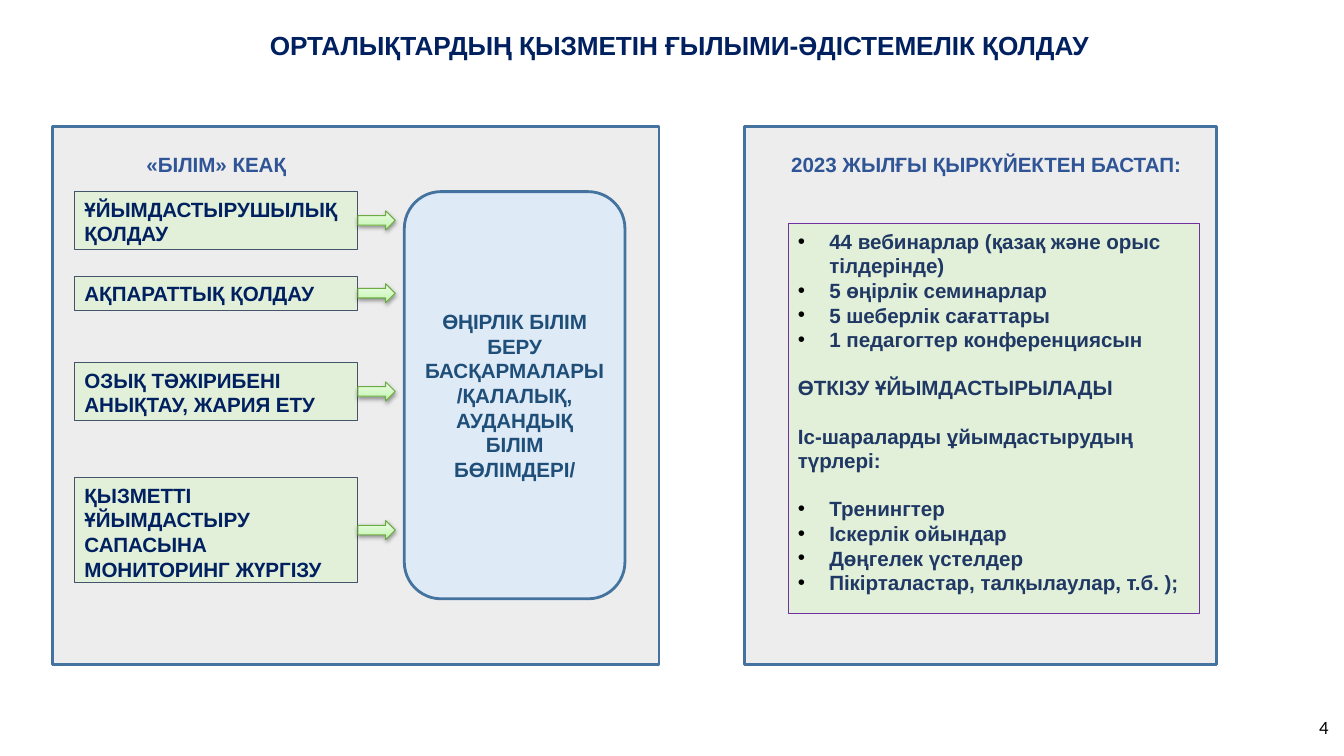
from lxml.etree import SubElement
from pptx import Presentation
from pptx.dml.color import RGBColor
from pptx.enum.shapes import MSO_SHAPE
from pptx.enum.text import MSO_ANCHOR, PP_ALIGN
from pptx.oxml import parse_xml
from pptx.oxml.ns import nsdecls, qn
from pptx.util import Cm, Pt

BLACK = RGBColor(0x00, 0x00, 0x00)
NAVY = RGBColor(0x00, 0x20, 0x60)
HEADING_BLUE = RGBColor(0x2F, 0x55, 0x97)
LIST_BLUE = RGBColor(0x20, 0x38, 0x64)
DEPARTMENT_BLUE = RGBColor(0x1F, 0x4E, 0x79)
PANEL_GRAY = RGBColor(0xED, 0xED, 0xED)
PANEL_LINE = RGBColor(0x43, 0x73, 0x9E)
PALE_BLUE = RGBColor(0xDE, 0xEB, 0xF7)
PALE_GREEN = RGBColor(0xE2, 0xF0, 0xD9)
SLATE = RGBColor(0x44, 0x54, 0x6A)
PURPLE = RGBColor(0x70, 0x30, 0xA0)
ARROW_LINE = RGBColor(0x6D, 0xAC, 0x43)
ARROW_STOPS = [
    (0, RGBColor(0xBE, 0xF5, 0xA7)),
    (35, RGBColor(0xD1, 0xF7, 0xC2)),
    (100, RGBColor(0xED, 0xFD, 0xE7)),
]

BODY_SIZE = 14.67
LINE_HEIGHT = 16.85

SUPPORT_ROWS = [
    (1.65, 1.45, "ҰЙЫМДАСТЫРУШЫЛЫҚ ҚОЛДАУ"),
    (3.78, 0.86, "АҚПАРАТТЫҚ ҚОЛДАУ"),
    (5.96, 1.45, "ОЗЫҚ ТӘЖІРИБЕНІ АНЫҚТАУ, ЖАРИЯ ЕТУ"),
    (8.86, 2.64, "ҚЫЗМЕТТІ ҰЙЫМДАСТЫРУ САПАСЫНА МОНИТОРИНГ ЖҮРГІЗУ"),
]
EVENTS = [
    "44 вебинарлар (қазақ және орыс тілдерінде)",
    "5 өңірлік семинарлар",
    "5 шеберлік сағаттары",
    "1 педагогтер конференциясын",
]
EVENT_TYPES = [
    "Тренингтер",
    "Іскерлік ойындар",
    "Дөңгелек үстелдер",
    "Пікірталастар, талқылаулар, т.б. );",
]


def add_bullet(paragraph):
    properties = paragraph._p.get_or_add_pPr()
    properties.set("marL", str(Cm(0.79)))
    properties.set("indent", str(-Cm(0.79)))
    color = SubElement(properties, qn("a:buClr"))
    SubElement(color, qn("a:srgbClr"), val=str(BLACK))
    SubElement(properties, qn("a:buFont"), typeface="Arial")
    SubElement(properties, qn("a:buChar"), char="•")


def write_text(frame, text, *, color, size=BODY_SIZE, name="Arial", bold=True,
               align=PP_ALIGN.LEFT, anchor=MSO_ANCHOR.TOP, bullet=False,
               space_before=0, append=False):
    frame.word_wrap = True
    frame.vertical_anchor = anchor
    paragraph = frame.add_paragraph() if append else frame.paragraphs[0]
    paragraph.alignment = align
    if space_before:
        paragraph.space_before = Pt(space_before)
    if bullet:
        add_bullet(paragraph)
    run = paragraph.add_run()
    run.text = text
    run.font.name = name
    run.font.size = Pt(size)
    run.font.bold = bold
    run.font.color.rgb = color


def add_label(slide, box, text, **text_format):
    shape = slide.shapes.add_textbox(*(Cm(value) for value in box))
    write_text(shape.text_frame, text, **text_format)


def add_box(slide, box, fill, line, line_width=0.75, kind=MSO_SHAPE.RECTANGLE):
    shape = slide.shapes.add_shape(kind, *(Cm(value) for value in box))
    shape.shadow.inherit = False
    shape.fill.solid()
    shape.fill.fore_color.rgb = fill
    shape.line.color.rgb = line
    shape.line.width = Pt(line_width)
    return shape


def add_arrow(slide, left, middle):
    width, height = 0.94, 0.48
    arrow = add_box(slide, (left, middle - height / 2, width, height),
                    PALE_GREEN, ARROW_LINE, kind=MSO_SHAPE.RIGHT_ARROW)
    properties = arrow._element.spPr
    stops = "".join(
        f'<a:gs pos="{position * 1000}"><a:srgbClr val="{color}"/></a:gs>'
        for position, color in ARROW_STOPS
    )
    gradient = parse_xml(
        f'<a:gradFill {nsdecls("a")} rotWithShape="1"><a:gsLst>{stops}</a:gsLst>'
        '<a:lin ang="16200000" scaled="1"/></a:gradFill>'
    )
    properties.replace(properties.find(qn("a:solidFill")), gradient)
    shadow = parse_xml(
        f'<a:outerShdw {nsdecls("a")} blurRad="{Pt(3.1)}" dist="{Pt(1.6)}" '
        f'dir="5400000" rotWithShape="0"><a:srgbClr val="{BLACK}">'
        '<a:alpha val="38000"/></a:srgbClr></a:outerShdw>'
    )
    properties.find(qn("a:effectLst")).append(shadow)


def add_support_panel(slide, left, top, width, height):
    add_box(slide, (left, top, width, height), PANEL_GRAY, PANEL_LINE, 2)
    row_left, row_width = left + 0.56, 7.14
    add_label(slide, (row_left, top + 0.53, row_width, 0.86), "«БІЛІМ» КЕАҚ",
              color=HEADING_BLUE, align=PP_ALIGN.CENTER)
    departments = add_box(slide, (left + 8.87, top + 1.65, 5.56, 10.26),
                          PALE_BLUE, PANEL_LINE, 2, MSO_SHAPE.ROUNDED_RECTANGLE)
    write_text(departments.text_frame,
               "ӨҢІРЛІК БІЛІМ БЕРУ БАСҚАРМАЛАРЫ /ҚАЛАЛЫҚ, АУДАНДЫҚ БІЛІМ БӨЛІМДЕРІ/",
               color=DEPARTMENT_BLUE, align=PP_ALIGN.CENTER, anchor=MSO_ANCHOR.MIDDLE)
    for offset, row_height, text in SUPPORT_ROWS:
        row = add_box(slide, (row_left, top + offset, row_width, row_height),
                      PALE_GREEN, SLATE)
        write_text(row.text_frame, text, color=NAVY)
        add_arrow(slide, row_left + row_width, top + offset + row_height / 2)


def add_events_panel(slide, left, top, width, height):
    add_box(slide, (left, top, width, height), PANEL_GRAY, PANEL_LINE, 2)
    add_label(slide, (left + 0.92, top + 0.53, 10.57, 0.86),
              "2023 ЖЫЛҒЫ ҚЫРКҮЙЕКТЕН БАСТАП:", color=HEADING_BLUE)
    events = add_box(slide, (left + 1.09, top + 2.46, 10.36, 9.83), PALE_GREEN, PURPLE)
    frame = events.text_frame
    for index, text in enumerate(EVENTS):
        write_text(frame, text, color=LIST_BLUE, bullet=True, append=index > 0)
    for text in ("ӨТКІЗУ ҰЙЫМДАСТЫРЫЛАДЫ", "Іс-шараларды ұйымдастырудың түрлері:"):
        write_text(frame, text, color=LIST_BLUE, space_before=LINE_HEIGHT, append=True)
    for index, text in enumerate(EVENT_TYPES):
        write_text(frame, text, color=LIST_BLUE, bullet=True, append=True,
                   space_before=0 if index else LINE_HEIGHT)


def main():
    presentation = Presentation()
    presentation.slide_width = Cm(33.87)
    presentation.slide_height = Cm(19.05)
    slide = presentation.slides.add_slide(presentation.slide_layouts[6])
    add_label(slide, (2.65, 0.61, 28.93, 1.02),
              "ОРТАЛЫҚТАРДЫҢ ҚЫЗМЕТІН ҒЫЛЫМИ-ӘДІСТЕМЕЛІК ҚОЛДАУ",
              color=NAVY, size=18.67, align=PP_ALIGN.CENTER)
    add_support_panel(slide, 1.32, 3.18, 15.29, 13.56)
    add_events_panel(slide, 18.77, 3.18, 11.89, 13.56)
    add_label(slide, (31.7, 17.6, 2.03, 1.45), "4", color=BLACK, size=13.33,
              name="Calibri", bold=False, align=PP_ALIGN.RIGHT, anchor=MSO_ANCHOR.MIDDLE)
    presentation.save("out.pptx")


if __name__ == "__main__":
    main()
